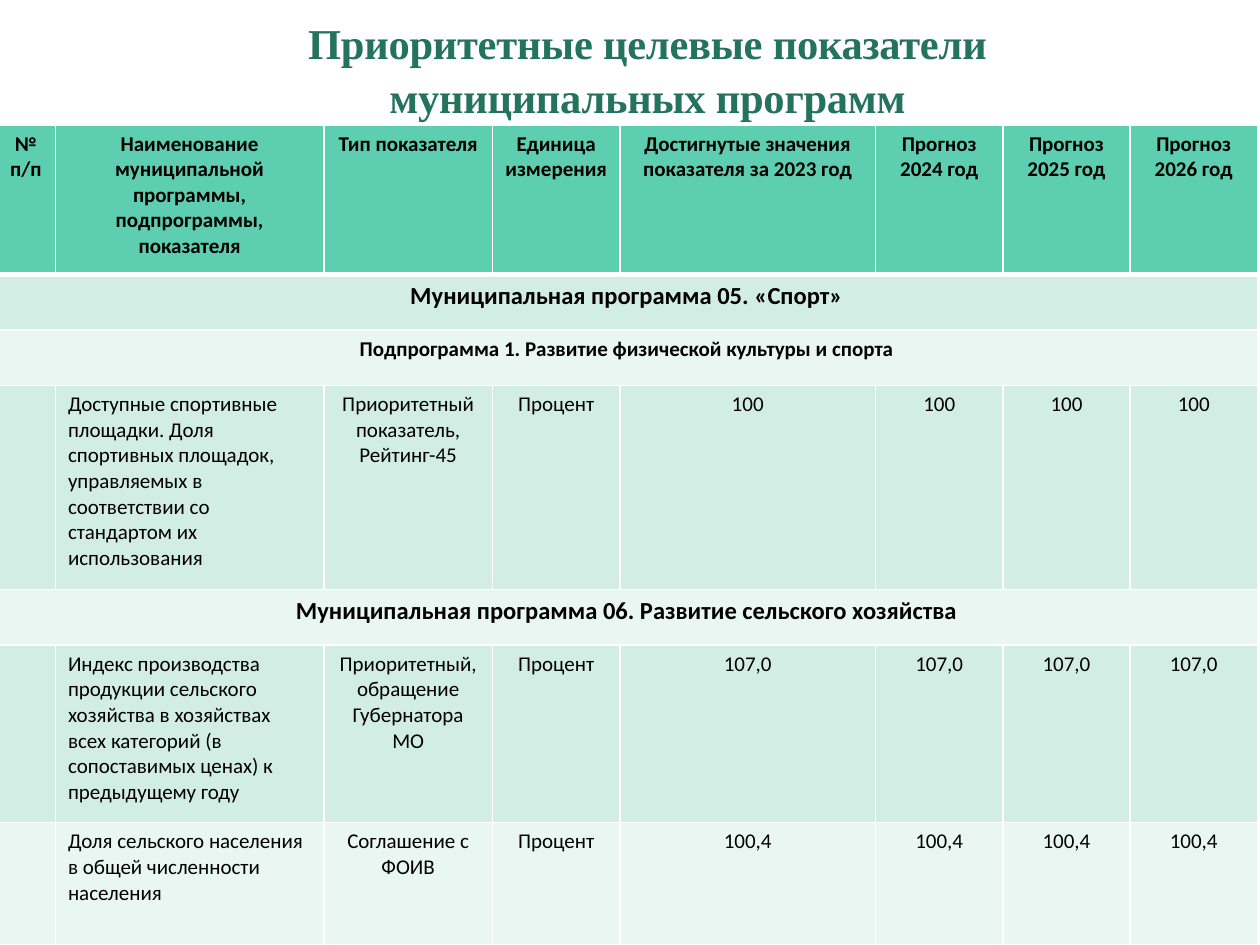
"""Builds a slide with a table of priority targets of municipal programmes."""
import pptx
import pptx.util
import pptx.dml.color
import pptx.enum.text
import pptx.oxml.ns
import lxml.etree

Inches, Pt = pptx.util.Inches, pptx.util.Pt
RGBColor = pptx.dml.color.RGBColor
ALIGN = pptx.enum.text.PP_ALIGN

TITLE_GREEN = RGBColor(0x23, 0x73, 0x5D)
HEADER_GREEN = RGBColor(0x5D, 0xCE, 0xAF)
BAND_DARK = RGBColor(0xD2, 0xED, 0xE3)
BAND_LIGHT = RGBColor(0xEA, 0xF6, 0xF2)
BLACK = RGBColor(0, 0, 0)
WHITE = RGBColor(0xFF, 0xFF, 0xFF)

TITLE_LINES = ["Приоритетные целевые показатели", "муниципальных программ"]
COLUMN_WIDTHS = [0.47, 2.13, 1.34, 1.01, 2.03, 1.01, 1.01, 1.01]
ROW_HEIGHTS = [1.19, 0.44, 0.44, 1.62, 0.44, 1.41, 0.97]
ROWS = [
    ["№ п/п", "Наименование муниципальной программы, подпрограммы, показателя",
     "Тип показателя", "Единица измерения",
     "Достигнутые значения показателя за 2023 год",
     "Прогноз 2024 год", "Прогноз 2025 год", "Прогноз 2026 год"],
    ["Муниципальная программа 05. «Спорт»"],
    ["Подпрограмма 1. Развитие физической культуры и спорта"],
    ["", "Доступные спортивные площадки. Доля спортивных площадок, "
     "управляемых в соответствии со стандартом их использования",
     "Приоритетный показатель, Рейтинг-45", "Процент"] + ["100"] * 4,
    ["Муниципальная программа 06. Развитие сельского хозяйства"],
    ["", "Индекс производства продукции сельского хозяйства в хозяйствах "
     "всех категорий (в сопоставимых ценах) к предыдущему году",
     "Приоритетный, обращение Губернатора МО", "Процент"] + ["107,0"] * 4,
    ["", "Доля сельского населения в общей численности населения",
     "Соглашение с ФОИВ", "Процент"] + ["100,4"] * 4,
]
PROGRAMME_ROWS = (1, 4)


def add_border(cell, side, points):
    properties = cell._tc.get_or_add_tcPr()
    line = lxml.etree.SubElement(properties, pptx.oxml.ns.qn(f"a:ln{side}"),
                                 w=str(Pt(points)))
    fill = lxml.etree.SubElement(line, pptx.oxml.ns.qn("a:solidFill"))
    lxml.etree.SubElement(fill, pptx.oxml.ns.qn("a:srgbClr"), val=str(WHITE))


def add_span(para, text, font_name, size, color, bold):
    span = para.add_run()
    span.text = text
    span.font.name = font_name
    span.font.size = Pt(size)
    span.font.color.rgb = color
    span.font.bold = bold
    return span


deck = pptx.Presentation()
deck.slide_width, deck.slide_height = Inches(10), Inches(7.5)
page = deck.slides.add_slide(deck.slide_layouts[5])

title = page.shapes.title
title.left, title.top = Inches(0.2), Inches(0.13)
title.width, title.height = Inches(9.88), Inches(1.02)
frame = title.text_frame
frame.word_wrap = True
frame.auto_size = pptx.enum.text.MSO_AUTO_SIZE.NONE
frame.vertical_anchor = pptx.enum.text.MSO_ANCHOR.MIDDLE
frame.margin_top, frame.margin_bottom = Inches(0), Inches(0.2)
para = frame.paragraphs[0]
para.alignment = ALIGN.CENTER
para.line_spacing = 1.05
for index, text in enumerate(TITLE_LINES):
    if index:
        para.add_line_break()
    span = add_span(para, text, "Times New Roman", 24.3, TITLE_GREEN, True)
    span.font._element.set("spc", "-10")

table = page.shapes.add_table(
    len(ROWS), len(COLUMN_WIDTHS), Inches(-0.03), Inches(0.99),
    Inches(sum(COLUMN_WIDTHS)), Inches(sum(ROW_HEIGHTS))).table
for column, width in zip(table.columns, COLUMN_WIDTHS):
    column.width = Inches(width)

for row, (texts, height) in enumerate(zip(ROWS, ROW_HEIGHTS)):
    table.rows[row].height = Inches(height)
    is_section = len(texts) == 1
    band = HEADER_GREEN if row == 0 else BAND_DARK if row % 2 else BAND_LIGHT
    for column in range(len(COLUMN_WIDTHS)):
        cell = table.cell(row, column)
        for side in "LRTB":
            under_header = (row, side) in ((0, "B"), (1, "T"))
            add_border(cell, side, 3 if under_header else 1)
        cell.fill.solid()
        cell.fill.fore_color.rgb = band
    if is_section:
        table.cell(row, 0).merge(table.cell(row, len(COLUMN_WIDTHS) - 1))
    for column, text in enumerate(texts):
        if not text:
            continue
        para = table.cell(row, column).text_frame.paragraphs[0]
        is_name = row > 0 and column == 1
        para.alignment = ALIGN.LEFT if is_name else ALIGN.CENTER
        add_span(para, text, "Calibri", 14 if row in PROGRAMME_ROWS else 12,
                 BLACK, row == 0 or is_section)

deck.save("out.pptx")
